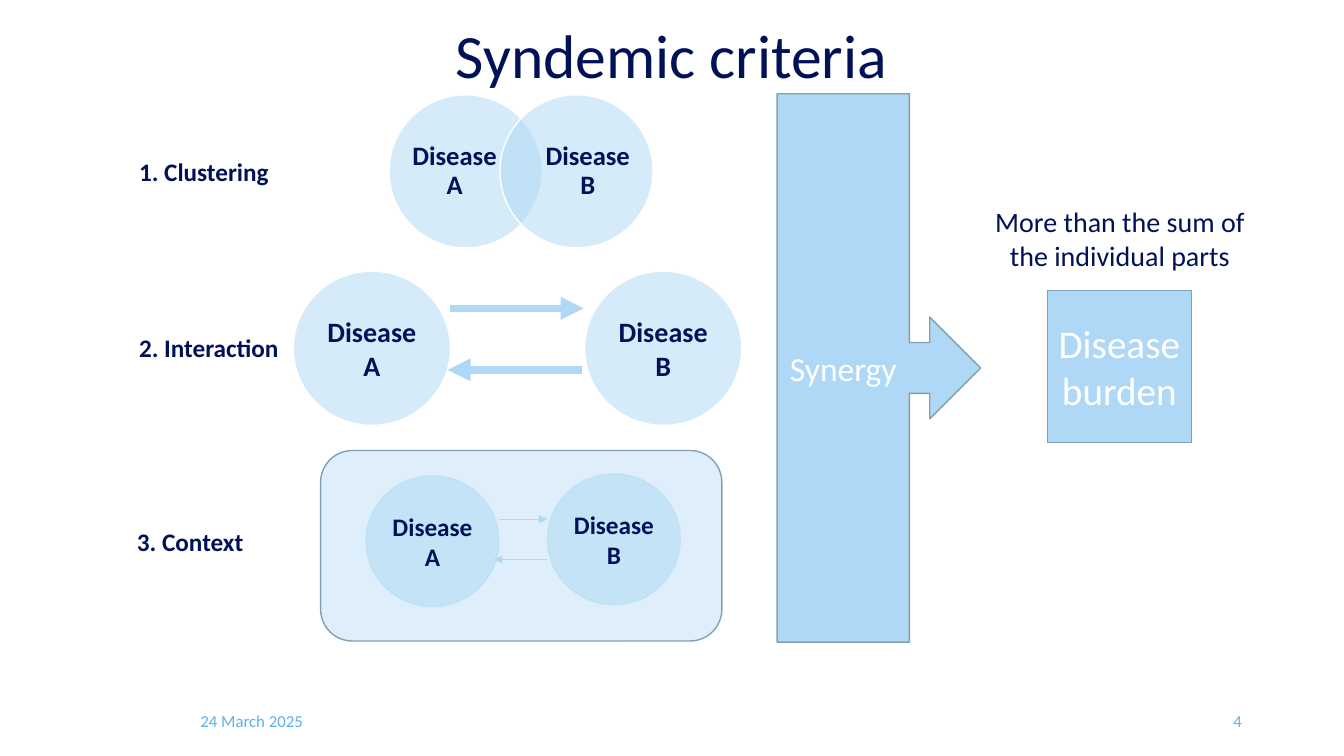
"""Build the slide on the three criteria of a syndemic."""
from dataclasses import dataclass

from lxml.etree import SubElement
from pptx import Presentation
from pptx.dml.color import RGBColor
from pptx.enum.shapes import MSO_CONNECTOR as Connector, MSO_SHAPE as Shape
from pptx.enum.text import MSO_ANCHOR as Anchor, PP_ALIGN as Align
from pptx.oxml.ns import qn
from pptx.util import Pt


@dataclass(frozen=True)
class Theme:
    font: str = "Calibri"
    navy: str = "001158"
    sky: str = "AED8F5"
    edge: str = "81A0B5"
    white: str = "FFFFFF"
    footer: str = "5CB1EB"
    title_size: int = 44
    burden_size: int = 28
    synergy_size: int = 24
    body_size: int = 20
    cluster_size: int = 19
    label_size: int = 18
    footer_size: int = 12


THEME = Theme()
DISEASES = ("Disease A", "Disease B")
TITLE = ("Syndemic criteria", (128.2, 8.6, 703.4, 60.5))
OUTCOME = ("More than the sum of the individual parts", (693.4, 142.6, 213.1, 55.4))
CRITERIA = [
    ("1. Clustering", (92.2, 108)),
    ("2. Interaction", (92.2, 234)),
    ("3. Context", (90.7, 372.2)),
]
FOOTERS = [("24 March 2025", 136.1, Align.LEFT), ("4", 678.2, Align.RIGHT)]
CLUSTER = {"circles": (277.9, 357.1), "labels": (293, 388.1)}
CONTEXT_FRAME = (229, 321.8, 286.6, 136.1)
SYNERGY = ("Synergy", (555.1, 67, 145.4, 391.7))
BURDEN = ("Disease burden", (748.1, 207.4, 103, 108.7))
INTERACTION = {
    "places": [(209.5, 193.7), (417.6, 193.7)],
    "size": (112.3, 110.2),
    "type_size": THEME.body_size,
    "outline": (THEME.white, 100),
    "arrows": [(321.1, 416.9, 220.3), (415.4, 319.7, 264.2)],
    "arrow_width": 5.5,
}
CONTEXT = {
    "places": [(261.4, 339.8), (391, 338.4)],
    "size": (95, 93.6),
    "type_size": THEME.label_size,
    "outline": (THEME.sky, 40),
    "arrows": [(356.4, 391, 370.8), (391, 352.8, 399.6)],
    "arrow_width": 0.5,
}


def paint(fill, color, opacity=100):
    fill.solid()
    fill.fore_color.rgb = RGBColor.from_string(color)
    if opacity < 100:
        tint = fill._xPr.find(qn("a:solidFill"))[0]
        SubElement(tint, qn("a:alpha")).set("val", str(opacity * 1000))


def write(box, text, size, color=THEME.navy, bold=False, align=Align.CENTER,
          anchor=Anchor.MIDDLE, insets=None, spacing=None):
    frame = box.text_frame
    frame.text = text
    frame.word_wrap = True
    frame.vertical_anchor = anchor
    if insets:
        frame.margin_left = frame.margin_right = Pt(insets[0])
        frame.margin_top = frame.margin_bottom = Pt(insets[1])
    para = frame.paragraphs[0]
    para.alignment = align
    if spacing:
        para.line_spacing = spacing
    font = para.runs[0].font
    font.name, font.size, font.bold = THEME.font, Pt(size), bold
    font.color.rgb = RGBColor.from_string(color)


def add_text(slide, text, area, size, **style):
    box = slide.shapes.add_textbox(*map(Pt, area))
    write(box, text, size, **style)


def add_block(slide, kind, area, opacity=100, outline=(THEME.edge, 100)):
    block = slide.shapes.add_shape(kind, *map(Pt, area))
    block.shadow.inherit = False
    paint(block.fill, THEME.sky, opacity)
    paint(block.line.fill, *outline)
    block.line.width = Pt(1)
    return block


def add_arrow(slide, start, end, y, width):
    arrow = slide.shapes.add_connector(Connector.STRAIGHT, Pt(start), Pt(y), Pt(end), Pt(y))
    paint(arrow.line.fill, THEME.sky)
    arrow.line.width = Pt(width)
    SubElement(arrow.line._get_or_add_ln(), qn("a:tailEnd")).set("type", "triangle")
    SubElement(arrow._element.spPr, qn("a:effectLst"))


def add_cluster(slide):
    for name, circle_x, label_x in zip(DISEASES, CLUSTER["circles"], CLUSTER["labels"]):
        add_block(slide, Shape.OVAL, (circle_x, 67.7, 109.4, 109.4), 50, (THEME.white, 100))
        add_text(slide, name, (label_x, 80.6, 63.4, 83.5), THEME.cluster_size,
                 bold=True, insets=(0, 0), spacing=0.9)


def add_exchange(slide, pair):
    for name, place in zip(DISEASES, pair["places"]):
        circle = add_block(slide, Shape.OVAL, place + pair["size"], 50, pair["outline"])
        write(circle, name, pair["type_size"], bold=True, insets=(2.9, 3.6))
    for start, end, y in pair["arrows"]:
        add_arrow(slide, start, end, y, pair["arrow_width"])


def main():
    deck = Presentation()
    deck.slide_width, deck.slide_height = Pt(960), Pt(540)
    slide = deck.slides.add_slide(deck.slide_layouts[6])

    for text, left, align in FOOTERS:
        add_text(slide, text, (left, 500.4, 216, 28.8), THEME.footer_size,
                 color=THEME.footer, align=align)

    add_cluster(slide)
    add_exchange(slide, INTERACTION)
    add_block(slide, Shape.ROUNDED_RECTANGLE, CONTEXT_FRAME, 40)
    add_exchange(slide, CONTEXT)

    for kind, (text, area), size in (
        (Shape.RIGHT_ARROW_CALLOUT, SYNERGY, THEME.synergy_size),
        (Shape.RECTANGLE, BURDEN, THEME.burden_size),
    ):
        write(add_block(slide, kind, area), text, size, color=THEME.white)

    for (text, area), size in ((OUTCOME, THEME.body_size), (TITLE, THEME.title_size)):
        add_text(slide, text, area, size, anchor=Anchor.TOP)
    for text, place in CRITERIA:
        add_text(slide, text, place + (118, 28.8), THEME.label_size,
                 bold=True, align=Align.LEFT, anchor=Anchor.TOP)

    deck.save("out.pptx")


if __name__ == "__main__":
    main()
